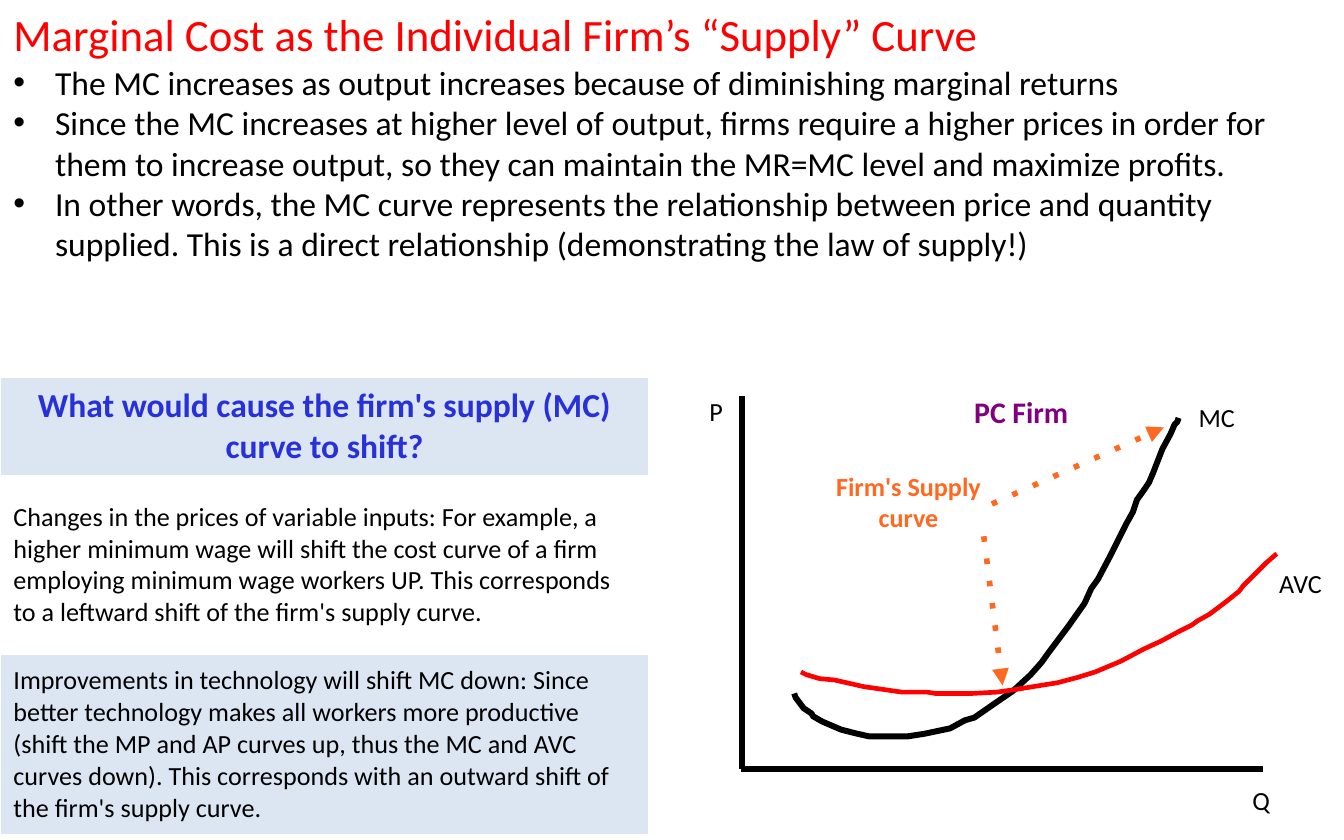
import pptx
import pptx.util
import pptx.dml.color
import pptx.enum.shapes
import pptx.enum.text
import pptx.oxml.ns
import lxml.etree

Inches, Pt = pptx.util.Inches, pptx.util.Pt
RGB = pptx.dml.color.RGBColor
ALIGN = pptx.enum.text.PP_ALIGN
ANCHOR = pptx.enum.text.MSO_ANCHOR
qn = pptx.oxml.ns.qn

BLACK = RGB(0x00, 0x00, 0x00)
RED = RGB(0xFF, 0x00, 0x00)
ORANGE = RGB(0xFF, 0x68, 0x20)
PURPLE = RGB(0x80, 0x00, 0x80)
BLUE = RGB(0x28, 0x30, 0xD8)
PALE = RGB(0xDC, 0xE6, 0xF2)


def write(par, text, size, color, bold=False, align=ALIGN.LEFT):
    par.alignment = align
    par.space_before = Pt(0)
    run = par.add_run()
    run.text = text
    run.font.name = "Calibri"
    run.font.size = Pt(size)
    run.font.bold = bold
    run.font.color.rgb = color


def draw_line(x1, y1, x2, y2, color):
    line = slide.shapes.add_connector(
        pptx.enum.shapes.MSO_CONNECTOR.STRAIGHT,
        Inches(x1), Inches(y1), Inches(x2), Inches(y2))
    line.line.color.rgb = color
    line.line.width = Pt(3)
    lxml.etree.SubElement(line._element.spPr, qn("a:effectLst"))
    return line


deck = pptx.Presentation()
deck.slide_width, deck.slide_height = Inches(10), Inches(6.25)
slide = deck.slides.add_slide(deck.slide_layouts[1])

# Title and bullet list
title, body = slide.placeholders
for holder, top, height in ((title, 0, 0.46), (body, 0.46, 1.56)):
    holder.left, holder.top = Inches(0), Inches(top)
    holder.width, holder.height = Inches(10), Inches(height)
    frame = holder.text_frame
    frame.auto_size = pptx.enum.text.MSO_AUTO_SIZE.NONE
    frame.vertical_anchor = ANCHOR.TOP
    frame.margin_bottom = 0
body.text_frame.margin_top = 0
write(title.text_frame.paragraphs[0],
      "Marginal Cost as the Individual Firm’s “Supply” Curve", 24, RED)

points = [
    "The MC increases as output increases because of diminishing marginal returns",
    "Since the MC increases at higher level of output, firms require a higher prices "
    "in order for them to increase output, so they can maintain the MR=MC level "
    "and maximize profits.",
    "In other words, the MC curve represents the relationship between price and "
    "quantity supplied. This is a direct relationship (demonstrating the law of supply!)",
]
frame = body.text_frame
for i, text in enumerate(points):
    par = frame.add_paragraph() if i else frame.paragraphs[0]
    write(par, text, 18, BLACK)
    props = par._p.get_or_add_pPr()
    props.set("marL", str(Inches(0.31)))
    props.set("indent", str(Inches(-0.31)))

# Axes
draw_line(5.52, 2.95, 5.52, 5.72, BLACK)
draw_line(5.51, 5.72, 9.4, 5.72, BLACK)

# Cost curves
mc = [(5.91, 5.16), (5.92, 5.19), (5.98, 5.27), (6.04, 5.31), (6.05, 5.33),
      (6.12, 5.37), (6.26, 5.43), (6.38, 5.46), (6.47, 5.48), (6.75, 5.48),
      (6.88, 5.46), (7.07, 5.42), (7.18, 5.36), (7.25, 5.34), (7.38, 5.25),
      (7.54, 5.14), (7.67, 5.02), (7.75, 4.93), (7.8, 4.86), (7.95, 4.66),
      (8.07, 4.49), (8.12, 4.38), (8.17, 4.31), (8.26, 4.14), (8.38, 3.9),
      (8.43, 3.81), (8.46, 3.72), (8.51, 3.65), (8.55, 3.59), (8.58, 3.52),
      (8.65, 3.34), (8.71, 3.23), (8.74, 3.16), (8.76, 3.14), (8.77, 3.11)]
avc = [(5.96, 5), (6, 5.02), (6.1, 5.05), (6.21, 5.06), (6.43, 5.11),
       (6.71, 5.15), (6.9, 5.15), (6.96, 5.16), (7.23, 5.16), (7.42, 5.15),
       (7.56, 5.13), (7.87, 5.08), (8.02, 5.04), (8.15, 5), (8.34, 4.92),
       (8.51, 4.83), (8.64, 4.77), (8.77, 4.7), (8.87, 4.65), (8.91, 4.62),
       (9, 4.57), (9.12, 4.48), (9.22, 4.4), (9.25, 4.36), (9.32, 4.29),
       (9.42, 4.19), (9.5, 4.12)]
for curve, color, width in ((mc, BLACK, 3.2), (avc, RED, 2.5)):
    dots = [(Inches(x), Inches(y)) for x, y in curve]
    pen = slide.shapes.build_freeform(*dots[0])
    pen.add_line_segments(dots[1:], close=False)
    shape = pen.convert_to_shape()
    shape.shadow.inherit = False
    shape.fill.background()
    shape.line.color.rgb = color
    shape.line.width = Pt(width)

# Dotted arrows to the supply curve
for ends in ((7.38, 3.75, 8.66, 3.18), (7.32, 3.99, 7.46, 5.1)):
    stroke = draw_line(*ends, ORANGE).line._get_or_add_ln()
    lxml.etree.SubElement(stroke, qn("a:prstDash"), val="dot")
    lxml.etree.SubElement(stroke, qn("a:tailEnd"), type="triangle")

# Graph labels
labels = [
    ("P", 5.18, 2.89, 0.42, 0.34, 14, BLACK, False, ALIGN.LEFT),
    ("Q", 9.22, 5.79, 0.5, 0.34, 14, BLACK, False, ALIGN.LEFT),
    ("PC Firm", 7.15, 2.88, 1.11, 0.37, 16, PURPLE, True, ALIGN.LEFT),
    ("MC", 8.82, 2.94, 0.58, 0.34, 14, BLACK, False, ALIGN.LEFT),
    ("AVC", 9.42, 4.17, 0.67, 0.34, 14, BLACK, False, ALIGN.LEFT),
    ("Firm's Supply curve", 5.95, 3.45, 1.62, 0.57, 14, ORANGE, True, ALIGN.CENTER),
]
for text, x, y, w, h, size, color, bold, align in labels:
    box = slide.shapes.add_textbox(Inches(x), Inches(y), Inches(w), Inches(h))
    box.text_frame.word_wrap = True
    write(box.text_frame.paragraphs[0], text, size, color, bold, align)

# Table of shift causes
rows = [
    (0.73, "What would cause the firm's supply (MC) curve to shift?",
     18, BLUE, True, ALIGN.CENTER),
    (1.33, "Changes in the prices of variable inputs: For example, a higher minimum "
     "wage will shift the cost curve of a firm employing minimum wage workers UP. "
     "This corresponds to a leftward shift of the firm's supply curve.",
     14, BLACK, False, ALIGN.LEFT),
    (1.34, "Improvements in technology will shift MC down: Since better technology "
     "makes all workers more productive (shift the MP and AP curves up, thus the MC "
     "and AVC curves down). This corresponds with an outward shift of the firm's "
     "supply curve.", 14, BLACK, False, ALIGN.LEFT),
]
table = slide.shapes.add_table(
    len(rows), 1, Inches(0), Inches(2.81), Inches(4.83), Inches(3.4)).table
table.first_row = table.horz_banding = False
for i, (height, *style) in enumerate(rows):
    table.rows[i].height = Inches(height)
    cell = table.cell(i, 0)
    cell.vertical_anchor = ANCHOR.MIDDLE
    cell.margin_top = cell.margin_bottom = Inches(0.04)
    if i % 2:
        cell.fill.background()
    else:
        cell.fill.solid()
        cell.fill.fore_color.rgb = PALE
    write(cell.text_frame.paragraphs[0], *style)

deck.save("out.pptx")
